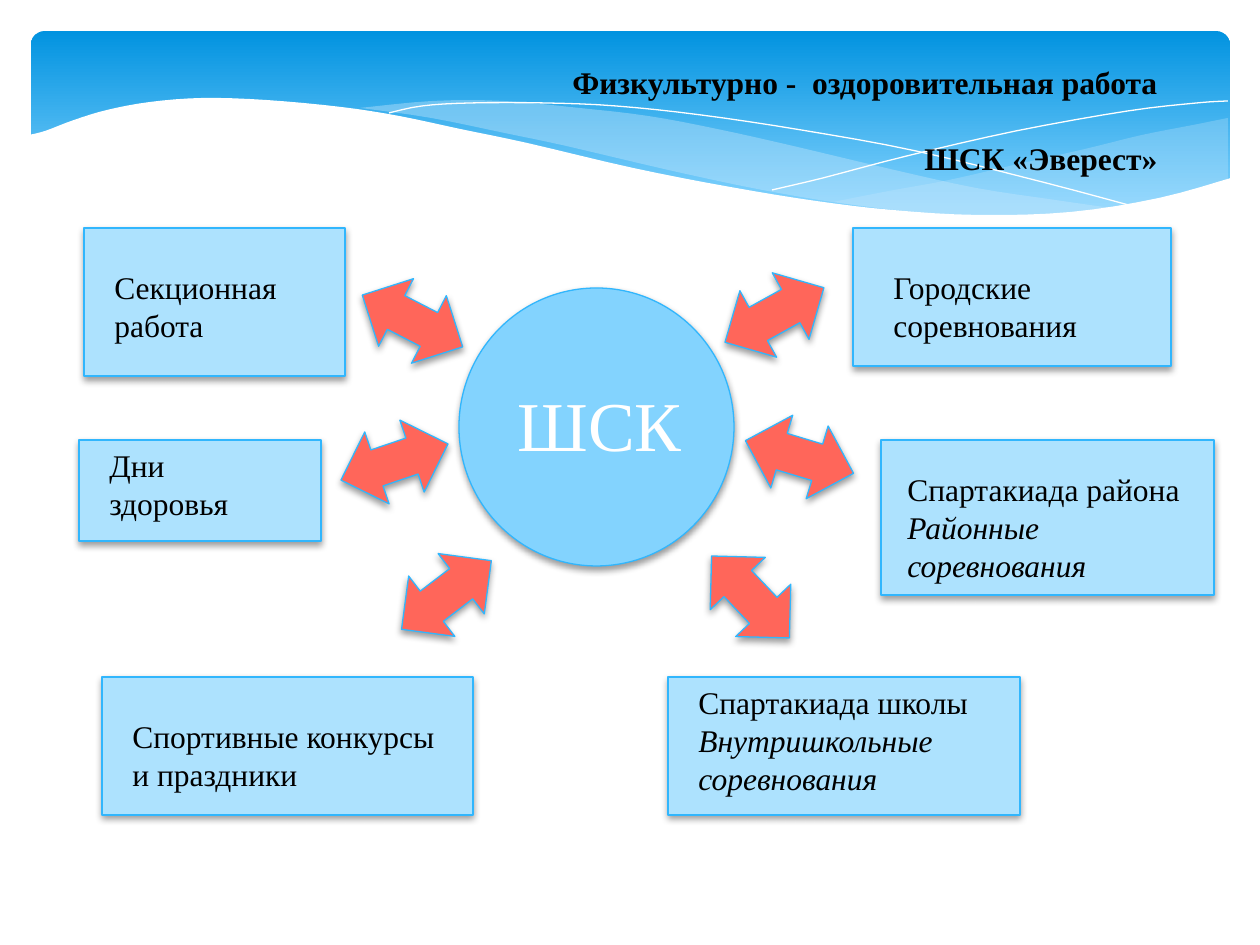
from dataclasses import dataclass

from lxml.etree import SubElement
from pptx import Presentation
from pptx.dml.color import RGBColor
from pptx.enum.shapes import MSO_SHAPE
from pptx.enum.text import MSO_AUTO_SIZE, PP_ALIGN
from pptx.oxml.ns import qn
from pptx.util import Pt


@dataclass(frozen=True)
class Theme:
    font: str = "Times New Roman"
    body: int = 18
    hub_size: int = 40
    ink: str = "000000"
    white: str = "FFFFFF"
    sky_top: str = "0293E0"
    sky: str = "83D3FE"
    mist: str = "C6E7FC"
    card: str = "ADE2FE"
    edge: str = "31B6FD"
    arrow: str = "FF665A"


THEME = Theme()
EMU_PER_PX = 914400 / 126

TINT_RIGHT = [
    [(1228, 118), (1193, 125), (1142, 135), (1085, 149), (1014, 165), (949, 180), (889, 191), (833, 202)],
    [(833, 202), (906, 211), (985, 216), (1052, 217), (1110, 213), (1160, 202), (1228, 179)],
]
TINT_LEFT = [
    [(1125, 210), (1055, 200), (976, 188), (890, 169), (793, 146), (717, 129),
     (648, 116), (579, 108), (503, 101), (433, 101), (360, 108)],
    [(360, 108), (431, 118), (509, 134), (566, 146), (668, 170), (757, 189),
     (838, 203), (911, 212), (974, 217), (1043, 218), (1104, 214), (1125, 210)],
]
FALLING_LINE = [
    [(389, 113), (422, 106), (471, 103), (545, 103), (616, 106), (701, 115),
     (801, 130), (916, 151), (1046, 183), (1143, 209)],
]
RISING_LINE = [
    [(772, 190), (823, 178), (907, 156), (1016, 131), (1128, 111), (1197, 103), (1228, 101)],
]
WHITE_WAVE = [
    [(1231, 178), (1159, 198), (1071, 212), (978, 215), (892, 210), (816, 201), (730, 187),
     (633, 168), (527, 143), (460, 129), (399, 116), (341, 107), (266, 100), (203, 98),
     (150, 102), (107, 110), (74, 120), (45, 131), (29, 135)],
    [(29, 282), (1231, 282)],
]


def px(length):
    return round(length * EMU_PER_PX)


def place(box, left, top, width, height):
    return [px(value) for value in (box[0] + left, box[1] + top, width, height)]


def paint(shape, color, alpha=100):
    shape.fill.solid()
    shape.fill.fore_color.rgb = RGBColor.from_string(color)
    if alpha < 100:
        tone = shape.fill._xPr.find(qn("a:solidFill"))[0]
        SubElement(tone, qn("a:alpha"), val=str(alpha * 1000))


def outline(shape, color, points):
    shape.line.color.rgb = RGBColor.from_string(color)
    shape.line.width = Pt(points)


def raised(slide, kind, bounds, color):
    shape = slide.shapes.add_shape(kind, *bounds)
    paint(shape, color)
    outline(shape, THEME.edge, 0.75)
    shape.shadow.inherit = False
    effects = shape._element.spPr.find(qn("a:effectLst"))
    shadow = SubElement(effects, qn("a:outerShdw"), blurRad=str(Pt(4)), dist=str(Pt(2)),
                        dir="5400000", algn="ctr", rotWithShape="0")
    tone = SubElement(shadow, qn("a:srgbClr"), val=THEME.ink)
    SubElement(tone, qn("a:alpha"), val="38000")
    return shape


def write(slide, bounds, lines, size=THEME.body, color=THEME.ink, align=PP_ALIGN.LEFT,
          bold=False, italic_after_first=False, gap=0):
    frame = slide.shapes.add_textbox(*bounds).text_frame
    frame.word_wrap = True
    frame.auto_size = MSO_AUTO_SIZE.SHAPE_TO_FIT_TEXT
    for index, line in enumerate(lines):
        paragraph = frame.add_paragraph() if index else frame.paragraphs[0]
        paragraph.text = line
        paragraph.alignment = align
        paragraph.space_before = Pt(gap if index else 0)
        font = paragraph.font
        font.name, font.size, font.bold = THEME.font, Pt(size), bold
        font.italic = italic_after_first and index > 0
        font.color.rgb = RGBColor.from_string(color)


def smooth(knots, steps=4):
    if len(knots) < 3:
        return knots
    ends = [knots[0], *knots, knots[-1]]
    curve = [knots[0]]
    for a, b, c, d in zip(ends, ends[1:], ends[2:], ends[3:]):
        for t in (step / steps for step in range(1, steps + 1)):
            curve.append(tuple(
                (2 * q + (r - p) * t + (2 * p - 5 * q + 4 * r - s) * t ** 2
                 + (3 * q - p - 3 * r + s) * t ** 3) / 2
                for p, q, r, s in zip(a, b, c, d)))
    return curve


def wave(slide, box, edges, color, alpha=100, filled=True):
    points = [(px(box[0] + x), px(box[1] + y)) for edge in edges for x, y in smooth(edge)]
    builder = slide.shapes.build_freeform(*points[0], scale=1.0)
    builder.add_line_segments(points[1:], close=filled)
    shape = builder.convert_to_shape()
    shape.shadow.inherit = False
    if filled:
        paint(shape, color, alpha)
        shape.line.fill.background()
    else:
        shape.fill.background()
        outline(shape, color, 0)


def header(slide, box):
    banner = slide.shapes.add_shape(MSO_SHAPE.ROUNDED_RECTANGLE, *place(box, 31, 31, 1199, 197))
    banner.adjustments[0] = 0.07
    banner.shadow.inherit = False
    banner.line.fill.background()
    banner.fill.gradient()
    banner.fill.gradient_angle = 270
    for stop, color, position in zip(banner.fill.gradient_stops, (THEME.sky_top, THEME.sky), (0, 0.9)):
        stop.color.rgb = RGBColor.from_string(color)
        stop.position = position
    wave(slide, box, TINT_RIGHT, THEME.mist, alpha=29)
    wave(slide, box, TINT_LEFT, THEME.mist, alpha=40)
    wave(slide, box, FALLING_LINE, THEME.white, filled=False)
    wave(slide, box, RISING_LINE, THEME.white, filled=False)
    wave(slide, box, WHITE_WAVE, THEME.white)
    write(slide, place(box, 200, 57, 970, 127),
          ["Физкультурно -  оздоровительная работа", "ШСК «Эверест»"],
          align=PP_ALIGN.RIGHT, bold=True, gap=22)


def card(slide, box, label, lines):
    raised(slide, MSO_SHAPE.RECTANGLE, place(box, 0, 0, *box[2:]), THEME.card)
    left, top, width = label
    write(slide, place(box, left, top, width, 51 + 38 * len(lines)), lines, italic_after_first=True)


def hub(slide, box):
    width, height = box[2:]
    raised(slide, MSO_SHAPE.OVAL, place(box, 0, 0, width, height), THEME.sky)
    arrow_width, arrow_height = 113, 76
    for dx, dy, angle in [(-150, 168, 322.6), (154, 170, 46.5), (203, 30, 16.8),
                          (178, -112, 331.1), (-202, 35, 341.3), (-184, -106, 27.3)]:
        bounds = place(box, (width - arrow_width) / 2 + dx, (height - arrow_height) / 2 + dy,
                       arrow_width, arrow_height)
        raised(slide, MSO_SHAPE.LEFT_RIGHT_ARROW, bounds, THEME.arrow).rotation = angle
    write(slide, place(box, 34, 87, 213, 104), ["ШСК"], THEME.hub_size, THEME.white, PP_ALIGN.CENTER)


def main():
    deck = Presentation()
    deck.slide_width, deck.slide_height = px(1260), px(945)
    slide = deck.slides.add_slide(deck.slide_layouts[6])
    header(slide, (0, 0, 1260, 282))
    for box, label, lines in [
        ((84, 228, 261, 148), (18, 34, 224), ["Секционная работа"]),
        ((79, 440, 242, 101), (18, 0, 205), ["Дни здоровья"]),
        ((102, 677, 371, 138), (18, 34, 341), ["Спортивные конкурсы и праздники"]),
        ((668, 677, 352, 138), (18, 0, 321), ["Спартакиада школы", "Внутришкольные соревнования"]),
        ((881, 440, 333, 155), (14, 24, 305), ["Спартакиада района", "Районные соревнования"]),
        ((853, 228, 318, 138), (28, 34, 271), ["Городские соревнования"]),
    ]:
        card(slide, box, label, lines)
    hub(slide, (459, 288, 275, 278))
    deck.save("out.pptx")


if __name__ == "__main__":
    main()
